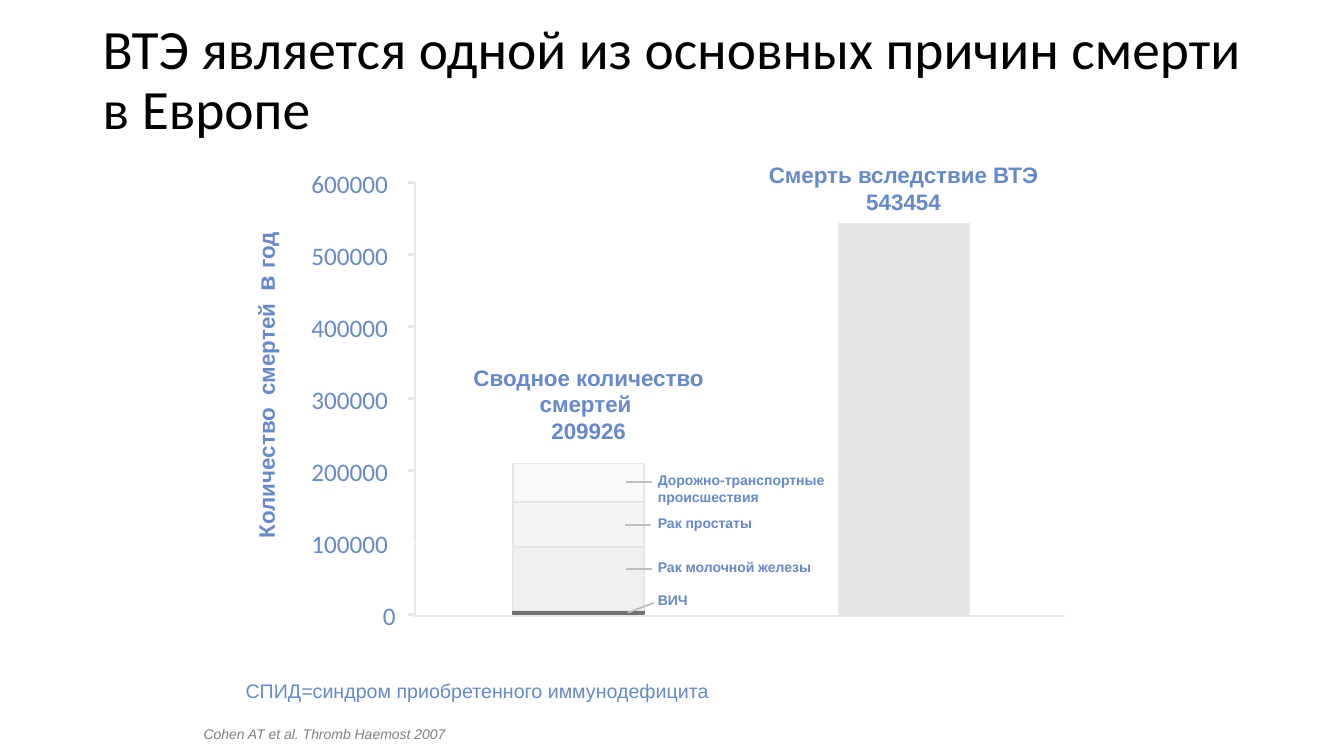
from dataclasses import dataclass

from lxml.etree import SubElement
from pptx import Presentation
from pptx.dml.color import RGBColor as Rgb
from pptx.enum.shapes import MSO_CONNECTOR as Link, MSO_SHAPE as Kind
from pptx.enum.text import MSO_ANCHOR as Anchor, PP_ALIGN as Align
from pptx.oxml.ns import qn
from pptx.util import Cm, Pt


@dataclass(frozen=True)
class Theme:
    head: str = "Calibri"
    body: str = "Arial"
    black: str = "000000"
    blue: str = "6689CC"
    gray: str = "808080"
    pale: str = "E7E6E6"
    white: str = "FFFFFF"
    lead: str = "BFBFBF"
    title: float = 39.6
    tick: float = 18
    label: float = 16
    foot: float = 14
    small: float = 10


THEME = Theme()


@dataclass(frozen=True)
class Label:
    text: str
    left: float
    top: float
    width: float
    height: float
    size: float
    font: str = THEME.body
    color: str = THEME.blue
    bold: bool = False
    slant: bool = False
    align: Align = Align.LEFT
    anchor: Anchor = Anchor.TOP
    wrap: bool = True
    inset: bool = True
    space: float = 1.0
    upright: bool = False
    more: tuple[tuple[str, float], ...] = ()


@dataclass(frozen=True)
class Bar:
    left: float
    base: float
    height: float
    fill: str
    edge: str = THEME.pale


@dataclass(frozen=True)
class Line:
    start: tuple[float, float]
    end: tuple[float, float]
    color: str = THEME.pale
    width: float = 0


@dataclass(frozen=True)
class Cause:
    name: str
    count: float  # height of the bar part
    fill: str
    edge: str
    top: float
    width: float
    height: float
    start: tuple[float, float]
    drop: float = 0


def draw_text(slide, item: Label) -> None:
    box = slide.shapes.add_textbox(
        Cm(item.left), Cm(item.top), Cm(item.width), Cm(item.height))
    frame = box.text_frame
    frame.word_wrap = item.wrap
    frame.vertical_anchor = item.anchor
    if not item.inset:
        frame.margin_left = frame.margin_right = 0
        frame.margin_top = frame.margin_bottom = 0
    if item.upright:
        frame._txBody.bodyPr.set("vert", "vert270")
    para = frame.paragraphs[0]
    para.text = item.text
    para.alignment = item.align
    para.line_spacing = item.space
    for run in para.runs:
        run.font.size = Pt(item.size)
    for text, size in item.more:
        run = para.add_run()
        run.text = text
        run.font.size = Pt(size)
    for run in para.runs:
        run.font.name = item.font
        run.font.bold = item.bold
        run.font.italic = item.slant
        run.font.color.rgb = Rgb.from_string(item.color)


def draw_bar(slide, item: Bar) -> None:
    bar = slide.shapes.add_shape(
        Kind.RECTANGLE, Cm(item.left), Cm(item.base - item.height),
        Cm(WIDE), Cm(item.height))
    bar.shadow.inherit = False
    bar.fill.solid()
    bar.fill.fore_color.rgb = Rgb.from_string(item.fill)
    bar.line.color.rgb = Rgb.from_string(item.edge)
    bar.line.width = Pt(1)


def draw_line(slide, item: Line) -> None:
    line = slide.shapes.add_connector(
        Link.STRAIGHT, *(Cm(v) for v in item.start + item.end))
    line.line.color.rgb = Rgb.from_string(item.color)
    line.line.width = Pt(item.width)
    SubElement(line._element.spPr, qn("a:effectLst"))


# Chart frame, in centimetres
BASE, STEP, AXIS = 15.49, 1.815, 10.46
WIDE, LEFT, RIGHT = 3.3, 12.93, 21.13
NOTE = 16.33

TEXTS = [
    Label("ВТЭ является одной из основных причин смерти в Европе",
          2.34, 1.45, 29.79, 1.19, THEME.title, THEME.head, THEME.black,
          anchor=Anchor.MIDDLE, space=0.9),
    Label("Cohen AT et al. Thromb Haemost 2007", 4.88, 18.14, 22.99, 0.69,
          THEME.small, color=THEME.gray, slant=True, anchor=Anchor.BOTTOM),
    Label("Сводное количество смертей \v209926", 11.48, 9.04, 6.71, 2.31,
          THEME.label, bold=True, align=Align.CENTER),
    Label("Смерть вследствие ВТЭ\v543454", 17.4, 3.94, 10.74, 1.63,
          THEME.label, bold=True, align=Align.CENTER),
    Label("Количество  смертей  ", 6.17, 4.72, 1.27, 9.09, THEME.label,
          bold=True, upright=True,
          more=(("в ", THEME.tick), ("год", THEME.label))),
    Label("СПИД=синдром приобретенного иммунодефицита",
          5.94, 16.99, 21.82, 0.84, THEME.foot, anchor=Anchor.BOTTOM),
]

# Parts of the stacked bar, from the bottom up
CAUSES = [
    Cause("ВИЧ", 0.1, "767171", "767171", 14.78, 2.16, 0.69,
          (16.48, 15.19), 0.25),
    Cause("Рак молочной железы", 1.6, "F1F0F0", THEME.pale, 13.94, 4.6, 0.69,
          (16.43, 14.33)),
    Cause("Рак простаты", 1.14, "F5F5F5", THEME.pale, 12.83, 3.84, 0.69,
          (16.41, 13.23)),
    Cause("Дорожно-транспортные происшествия", 0.97, "FAFAFA", THEME.pale,
          11.76, 5.0, 1.12, (16.43, 12.14)),
]


def main() -> None:
    deck = Presentation()
    deck.slide_width, deck.slide_height = Cm(33.87), Cm(19.05)
    slide = deck.slides.add_slide(deck.slide_layouts[6])

    # Title, captions and footnotes
    for item in TEXTS:
        draw_text(slide, item)

    # Bars
    base = BASE
    for cause in CAUSES:
        draw_bar(slide, Bar(LEFT, base, cause.count, cause.fill, cause.edge))
        base -= cause.count
    draw_bar(slide, Bar(RIGHT, BASE, 9.86, THEME.pale))

    # Axes, ticks and tick labels
    draw_line(slide, Line((AXIS, BASE - 6 * STEP), (AXIS, BASE)))
    draw_line(slide, Line((10.41, 15.52), (26.85, 15.52)))
    for i in range(7):
        y = BASE - i * STEP
        color = THEME.white if i == 1 else THEME.pale
        draw_line(slide, Line((10.29, y), (AXIS, y), color))
        left, width = (7.85, 2.13) if i else (9.65, 0.36)
        draw_text(slide, Label(str(i * 100000), left, y - 0.36, width, 0.76,
                               THEME.tick, THEME.head, wrap=False,
                               inset=False))

    # Names of the causes and their leaders
    for cause in CAUSES:
        draw_text(slide, Label(cause.name, NOTE, cause.top, cause.width,
                               cause.height, THEME.small, bold=True))
        x, y = cause.start
        draw_line(slide, Line((x, y), (x - 0.66, y + cause.drop),
                              THEME.lead, 1.25))

    deck.save("out.pptx")


if __name__ == "__main__":
    main()
